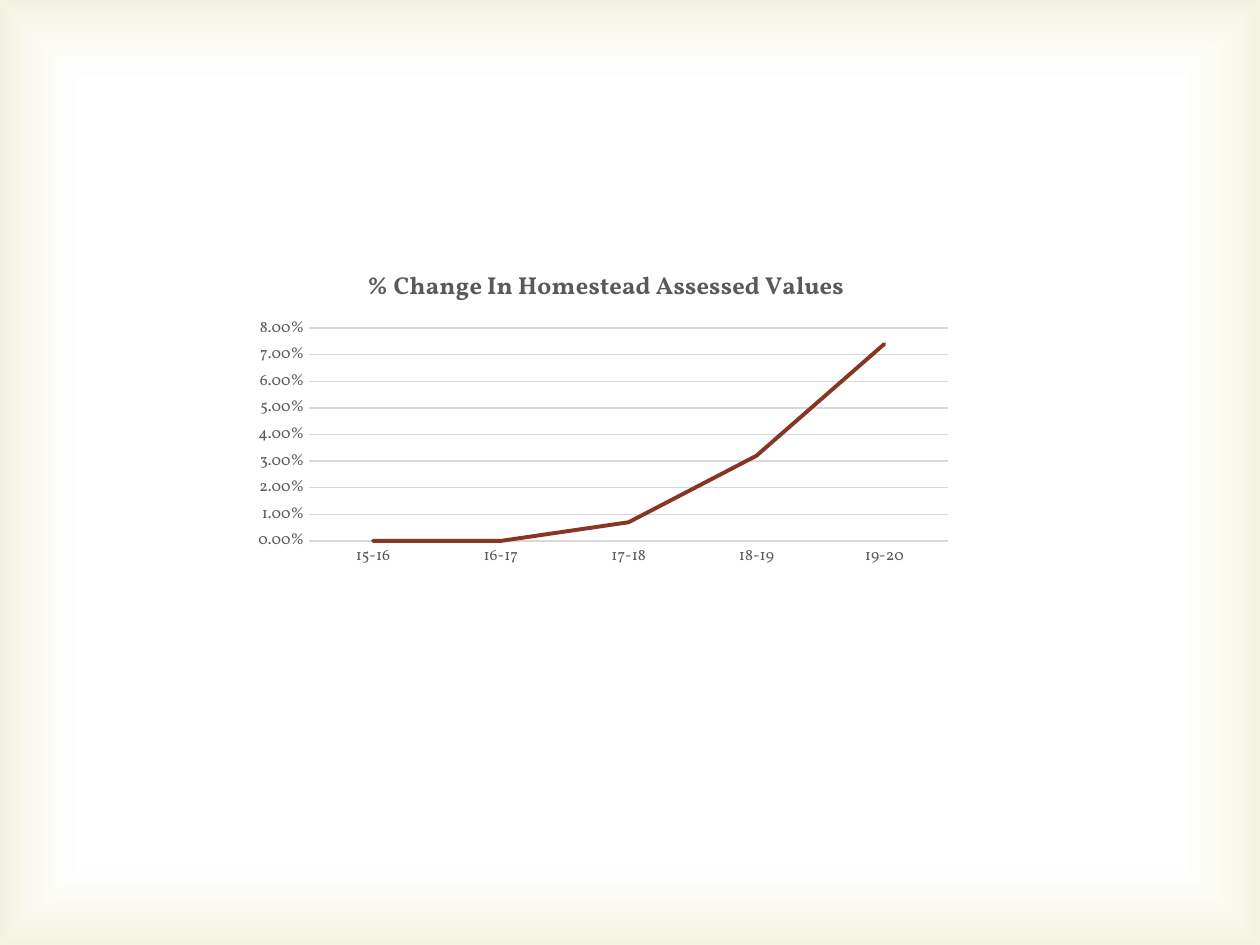
from pptx import Presentation
from pptx.chart.data import CategoryChartData
from pptx.dml.color import RGBColor
from pptx.enum.chart import XL_CHART_TYPE as ChartType, XL_MARKER_STYLE as Marker, XL_TICK_MARK as Tick
from pptx.enum.shapes import MSO_SHAPE as Shape
from pptx.oxml import parse_xml
from pptx.oxml.ns import nsdecls
from pptx.util import Pt

TITLE = " % Change In Homestead Assessed Values"
CHANGES = {"15-16": 0, "16-17": 0, "17-18": 0.007, "18-19": 0.032, "19-20": 0.074}
GLOW_STOPS = [(83, "FFFFFF", 11), (100, "D1CA75", 23)]
PLOT_AREA = {"x": 0.09, "y": 0.24, "w": 0.89, "h": 0.66}
FONT = "Vollkorn"
GREY = RGBColor(0x59, 0x59, 0x59)
GRID = RGBColor(0xD9, 0xD9, 0xD9)
RUST = RGBColor(0x87, 0x36, 0x24)
WIDTH, HEIGHT = Pt(720), Pt(540)


def format_font(font, size, bold=False):
    font.name = FONT
    font.size = Pt(size)
    font.bold = bold
    font.color.rgb = GREY


def write_text(text_frame, text, size, bold=False):
    text_frame.text = text
    format_font(text_frame.paragraphs[0].runs[0].font, size, bold)


def format_line(line, color, width):
    line.color.rgb = color
    line.width = Pt(width)


def add_glow(slide):
    glow = slide.shapes.add_shape(Shape.RECTANGLE, 0, 0, WIDTH, HEIGHT)
    glow.shadow.inherit = False
    glow.line.fill.background()
    stops = "".join(
        f'<a:gs pos="{position * 1000}"><a:srgbClr val="{color}">'
        f'<a:alpha val="{alpha * 1000}"/></a:srgbClr></a:gs>'
        for position, color, alpha in GLOW_STOPS
    )
    gradient = parse_xml(
        f'<a:gradFill {nsdecls("a")}><a:gsLst>{stops}</a:gsLst><a:path path="rect">'
        '<a:fillToRect l="50000" t="50000" r="50000" b="50000"/></a:path></a:gradFill>'
    )
    glow._element.spPr.find("{*}prstGeom").addnext(gradient)


def place_plot(chart):
    plot_area = chart._chartSpace.chart.plotArea
    for automatic in plot_area.findall("{*}layout"):
        plot_area.remove(automatic)
    sizes = "".join(f'<c:{side} val="{share}"/>' for side, share in PLOT_AREA.items())
    plot_area.insert(0, parse_xml(
        f'<c:layout {nsdecls("c")}><c:manualLayout><c:layoutTarget val="inner"/>'
        f'<c:xMode val="edge"/><c:yMode val="edge"/>{sizes}</c:manualLayout></c:layout>'
    ))


def add_change_chart(slide):
    data = CategoryChartData(number_format="0.0%")
    data.categories = list(CHANGES)
    data.add_series("Series 1", list(CHANGES.values()))
    chart = slide.shapes.add_chart(
        ChartType.LINE, Pt(139.7), Pt(143.3), Pt(410.4), Pt(184.3), data
    ).chart
    format_font(chart.font, 10)
    chart.has_legend = False
    chart.has_title = True
    write_text(chart.chart_title.text_frame, TITLE, 14, bold=True)
    chart.chart_title.include_in_layout = False
    place_plot(chart)

    for axis in (chart.category_axis, chart.value_axis):
        axis.major_tick_mark = axis.minor_tick_mark = Tick.NONE
        format_font(axis.tick_labels.font, 9)
    format_line(chart.category_axis.format.line, GRID, 0.75)

    values = chart.value_axis
    values.minimum_scale, values.maximum_scale, values.major_unit = 0, 0.08, 0.01
    values.tick_labels.number_format = "0.00%"
    values.tick_labels.number_format_is_linked = False
    values.format.line.fill.background()
    format_line(values.major_gridlines.format.line, GRID, 0.75)

    plot = chart.plots[0]
    plot.vary_by_categories = False
    series = plot.series[0]
    series.smooth = False
    series.marker.style = Marker.NONE
    format_line(series.format.line, RUST, 2.25)
    series.format.line._ln.set("cap", "rnd")


def main():
    presentation = Presentation()
    presentation.slide_width, presentation.slide_height = WIDTH, HEIGHT
    slide = presentation.slides.add_slide(presentation.slide_layouts[6])
    add_glow(slide)
    add_change_chart(slide)
    presentation.save("out.pptx")


if __name__ == "__main__":
    main()
